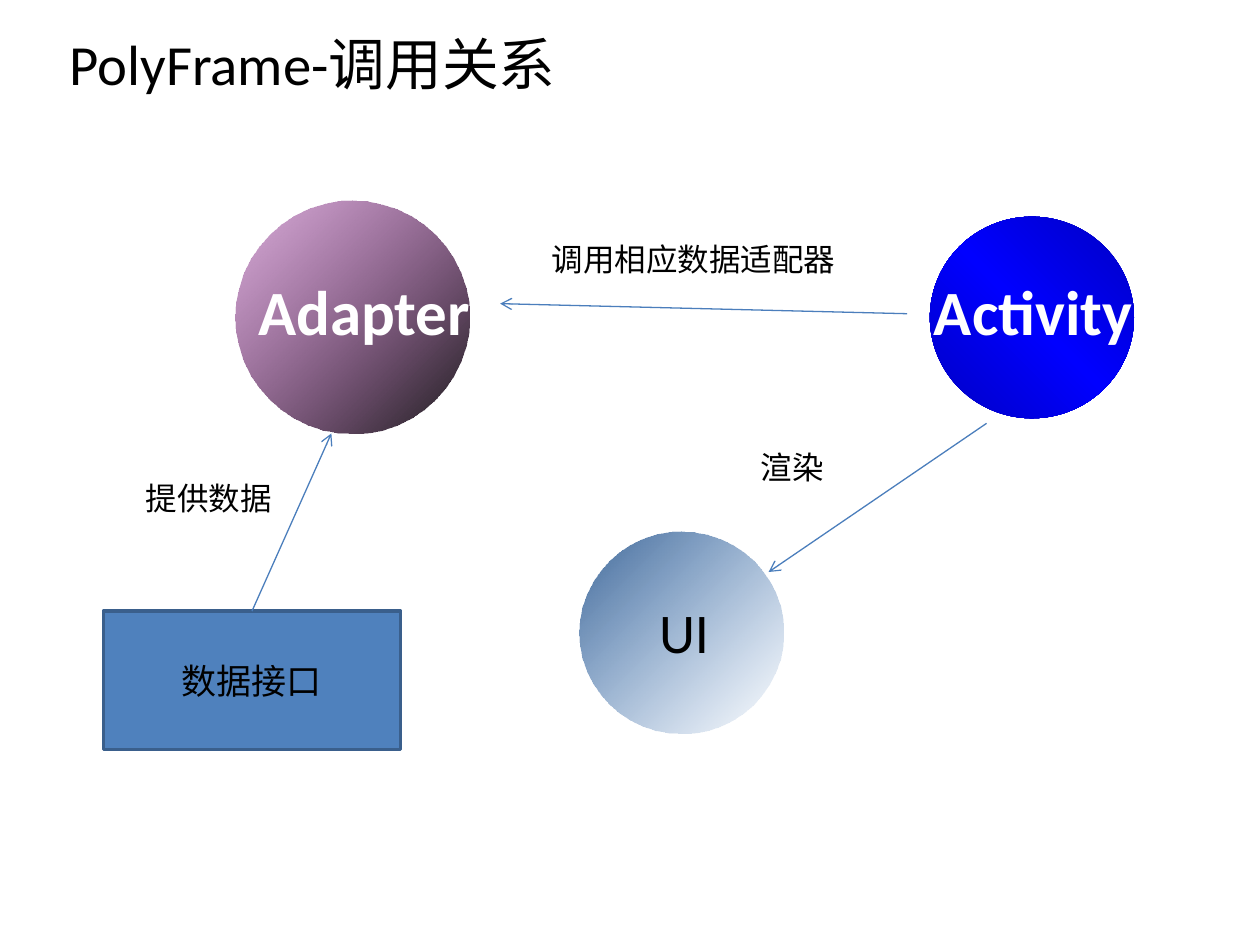
from lxml.etree import SubElement
from pptx import Presentation
from pptx.dml.color import RGBColor
from pptx.enum.shapes import MSO_CONNECTOR, MSO_SHAPE
from pptx.enum.text import MSO_ANCHOR, MSO_AUTO_SIZE, PP_ALIGN
from pptx.oxml.ns import qn
from pptx.util import Inches, Pt


def color(hex_code):
    return RGBColor.from_string(hex_code)


class Diagram:
    COLUMNS, ROWS = 100, 75
    LATIN, CJK = "Calibri", "Noto Sans CJK SC"
    BLACK, WHITE = "000000", "FFFFFF"
    BOX_FILL, BOX_EDGE, ARROW = "4F81BD", "3A5F8C", "4B7EBC"

    def __init__(self, presentation):
        self.width = presentation.slide_width
        self.height = presentation.slide_height
        self.slide = presentation.slides.add_slide(presentation.slide_layouts[6])
        self.shapes = self.slide.shapes

    def grid(self, *cells):
        units = (self.width / self.COLUMNS, self.height / self.ROWS)
        return [round(cell * units[i % 2]) for i, cell in enumerate(cells)]

    def set_wording(self, shape, wording, size, hex_code, bold=False, align=PP_ALIGN.CENTER):
        paragraph = shape.text_frame.paragraphs[0]
        paragraph.text = wording
        paragraph.alignment = align
        font = paragraph.font
        font.name, font.size, font.bold = self.LATIN, Pt(size), bold
        font.color.rgb = color(hex_code)
        for properties in paragraph._p.xpath("a:pPr/a:defRPr"):
            SubElement(properties, qn("a:ea"), typeface=self.CJK)

    def text(self, cells, wording, size, hex_code=BLACK, bold=False,
             align=PP_ALIGN.CENTER, wrap=False, anchor=MSO_ANCHOR.TOP):
        box = self.shapes.add_textbox(*self.grid(*cells))
        frame = box.text_frame
        frame.word_wrap = wrap
        frame.auto_size = MSO_AUTO_SIZE.NONE
        frame.vertical_anchor = anchor
        self.set_wording(box, wording, size, hex_code, bold, align)

    def label(self, cells, wording):
        self.text(cells, wording, 18, align=PP_ALIGN.LEFT, wrap=True)

    def circle(self, cells, stops, angle):
        disc = self.shapes.add_shape(MSO_SHAPE.OVAL, *self.grid(*cells))
        disc.shadow.inherit = False
        disc.line.fill.background()
        disc.fill.gradient()
        gradient = disc._element.spPr.find(qn("a:gradFill"))
        for child in list(gradient):
            gradient.remove(child)
        stop_list = SubElement(gradient, qn("a:gsLst"))
        for position, hex_code, opacity in stops:
            stop = SubElement(stop_list, qn("a:gs"), pos=str(position * 1000))
            tint = SubElement(stop, qn("a:srgbClr"), val=hex_code)
            if opacity < 100:
                SubElement(tint, qn("a:alpha"), val=str(opacity * 1000))
        SubElement(gradient, qn("a:lin"), ang=str(angle * 60000), scaled="0")

    def box(self, cells, wording):
        panel = self.shapes.add_shape(MSO_SHAPE.RECTANGLE, *self.grid(*cells))
        panel.shadow.inherit = False
        panel.fill.solid()
        panel.fill.fore_color.rgb = color(self.BOX_FILL)
        panel.line.color.rgb = color(self.BOX_EDGE)
        panel.line.width = Pt(2)
        panel.text_frame.vertical_anchor = MSO_ANCHOR.MIDDLE
        self.set_wording(panel, wording, 20, self.BLACK)
        return panel

    def arrow(self, start, end, source=None):
        link = self.shapes.add_connector(MSO_CONNECTOR.STRAIGHT, *self.grid(*start, *end))
        if source is not None:
            link.begin_connect(source, 0)
        link.line.color.rgb = color(self.ARROW)
        link.line.width = Pt(0.75)
        properties = link._element.spPr
        SubElement(properties.find(qn("a:ln")), qn("a:tailEnd"), type="arrow")
        SubElement(properties, qn("a:effectLst"))


def main():
    presentation = Presentation()
    presentation.slide_width, presentation.slide_height = Inches(10), Inches(7.5)
    diagram = Diagram(presentation)

    diagram.text((0.4, 1.6, 48.8, 6.8), "PolyFrame-调用关系", 32.4,
                 wrap=True, anchor=MSO_ANCHOR.MIDDLE)

    diagram.circle((73.8, 17.2, 16.2, 16),
                   [(0, "0000C3", 100), (50, "0000FF", 100), (100, "0000C3", 100)], 315)
    diagram.circle((18.7, 15.9, 18.6, 18.5), [(0, "800080", 32), (100, "000000", 90)], 45)
    diagram.circle((46, 42.2, 16.2, 16), [(0, "416A9B", 100), (100, "4F81BD", 0)], 45)

    diagram.text((19.4, 21.1, 19, 7.1), "Adapter", 36, Diagram.WHITE, bold=True)
    diagram.text((51.3, 46.9, 6, 6.4), "UI", 32)
    diagram.text((73, 21.1, 18, 7.1), "Activity", 36, Diagram.WHITE, bold=True)

    diagram.arrow((72, 24.9), (39.7, 24.1))
    diagram.arrow((78.3, 33.6), (61, 45.4))
    data_interface = diagram.box((8.2, 48.5, 23.6, 11), "数据接口")
    diagram.arrow((20, 48.5), (26.3, 34.4), data_interface)

    diagram.label((10.6, 37.5, 15.7, 4), "提供数据")
    diagram.label((59.4, 35.1, 9.4, 4), "渲染")
    diagram.label((42.8, 18.6, 26, 4), "调用相应数据适配器")

    presentation.save("out.pptx")


if __name__ == "__main__":
    main()
